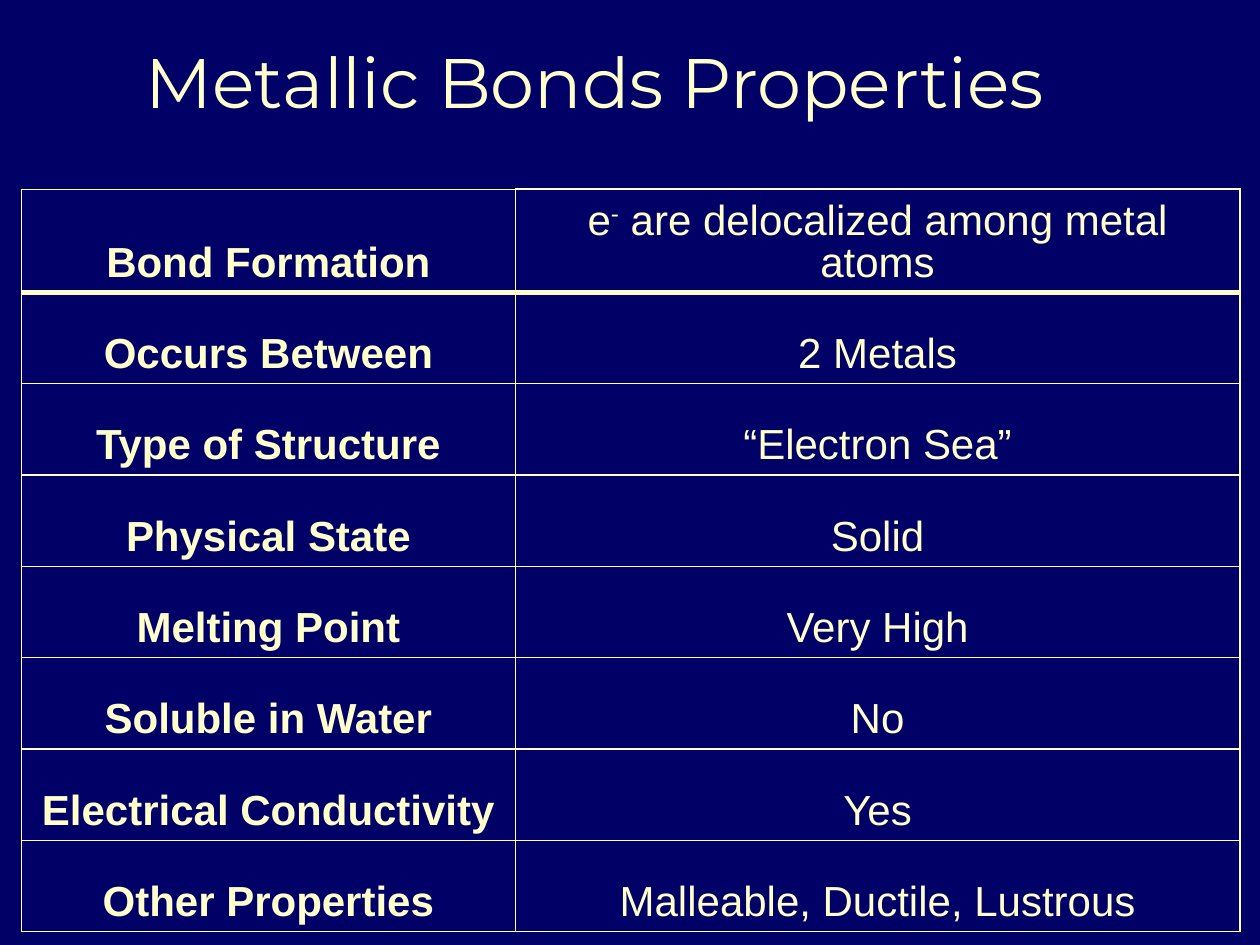
from dataclasses import dataclass

from lxml import etree
from pptx import Presentation
from pptx import util as u
from pptx.dml.color import RGBColor
from pptx.enum import text
from pptx.oxml.ns import qn


@dataclass(frozen=True)
class Theme:
    background: str = "000066"
    ink: str = "FFFFCC"
    title_font: str = "Montserrat"
    body_font: str = "Arial"
    title_size: int = 40
    body_size: int = 24
    thin: float = 0.5
    rule: float = 1
    heavy: float = 3


PROPERTIES = [
    ("Bond Formation", "e- are delocalized among metal atoms"),
    ("Occurs Between", "2 Metals"),
    ("Type of Structure", "“Electron Sea”"),
    ("Physical State", "Solid"),
    ("Melting Point", "Very High"),
    ("Soluble in Water", "No"),
    ("Electrical Conductivity", "Yes"),
    ("Other Properties", "Malleable, Ductile, Lustrous"),
]


class PageBuilder:
    def __init__(self, page, theme):
        self.page = page
        self.theme = theme
        fill = page.background.fill
        fill.solid()
        fill.fore_color.rgb = RGBColor.from_string(theme.background)

    def style(self, para, font_name, size, bold=False):
        para.alignment = text.PP_ALIGN.CENTER
        for span in para.runs:
            span.font.name = font_name
            span.font.size = u.Pt(size)
            span.font.bold = bold
            span.font.color.rgb = RGBColor.from_string(self.theme.ink)

    def title(self, words, left, top, width, height):
        box = self.page.shapes.add_textbox(*map(u.Inches, (left, top, width, height)))
        frame = box.text_frame
        frame.word_wrap = True
        frame.vertical_anchor = text.MSO_ANCHOR.BOTTOM
        frame.text = words
        self.style(frame.paragraphs[0], self.theme.title_font, self.theme.title_size)

    def border(self, cell, side, width):
        line = etree.SubElement(cell._tc.get_or_add_tcPr(), qn(f"a:ln{side}"),
                                w=str(u.Pt(width)))
        fill = etree.SubElement(line, qn("a:solidFill"))
        etree.SubElement(fill, qn("a:srgbClr"), val=self.theme.ink)

    def cell(self, cell, words, bold, borders):
        cell.vertical_anchor = text.MSO_ANCHOR.BOTTOM
        for side, width in borders.items():
            self.border(cell, side, width)
        cell.fill.background()
        para = cell.text_frame.paragraphs[0]
        if words.startswith("e-"):
            para.line_spacing = 0.9
            for part in ("e", "-", words[2:]):
                para.add_run().text = part
            para.runs[1]._r.get_or_add_rPr().set("baseline", "30000")
        else:
            para.text = words
        self.style(para, self.theme.body_font, self.theme.body_size, bold)

    def table(self, rows, left, top, column_widths, height):
        """Add a label and value table with a heavy rule below its first row."""
        frame = self.page.shapes.add_table(
            len(rows), len(column_widths), u.Inches(left), u.Inches(top),
            u.Inches(sum(column_widths)), u.Inches(height))
        table = frame.table
        table.first_row = table.horz_banding = False
        for column, width in zip(table.columns, column_widths):
            column.width = u.Inches(width)
        theme = self.theme
        for r, row in enumerate(rows):
            for c, words in enumerate(row):
                borders = dict.fromkeys("LRTB", theme.rule)
                if r == 0:
                    borders["B"] = theme.heavy
                    if c == 0:
                        borders["T"] = theme.thin
                elif r == 1:
                    borders["T"] = theme.heavy
                self.cell(table.cell(r, c), words, c == 0, borders)


def main():
    deck = Presentation()
    deck.slide_width = u.Inches(10)
    deck.slide_height = u.Inches(7.5)
    builder = PageBuilder(deck.slides.add_slide(deck.slide_layouts[6]), Theme())
    builder.title("Metallic Bonds Properties", 0.5, 0.16, 8.44, 0.86)
    builder.table(PROPERTIES, 0.17, 1.5, (3.92, 5.75), 5.8)
    deck.save("out.pptx")


if __name__ == "__main__":
    main()
